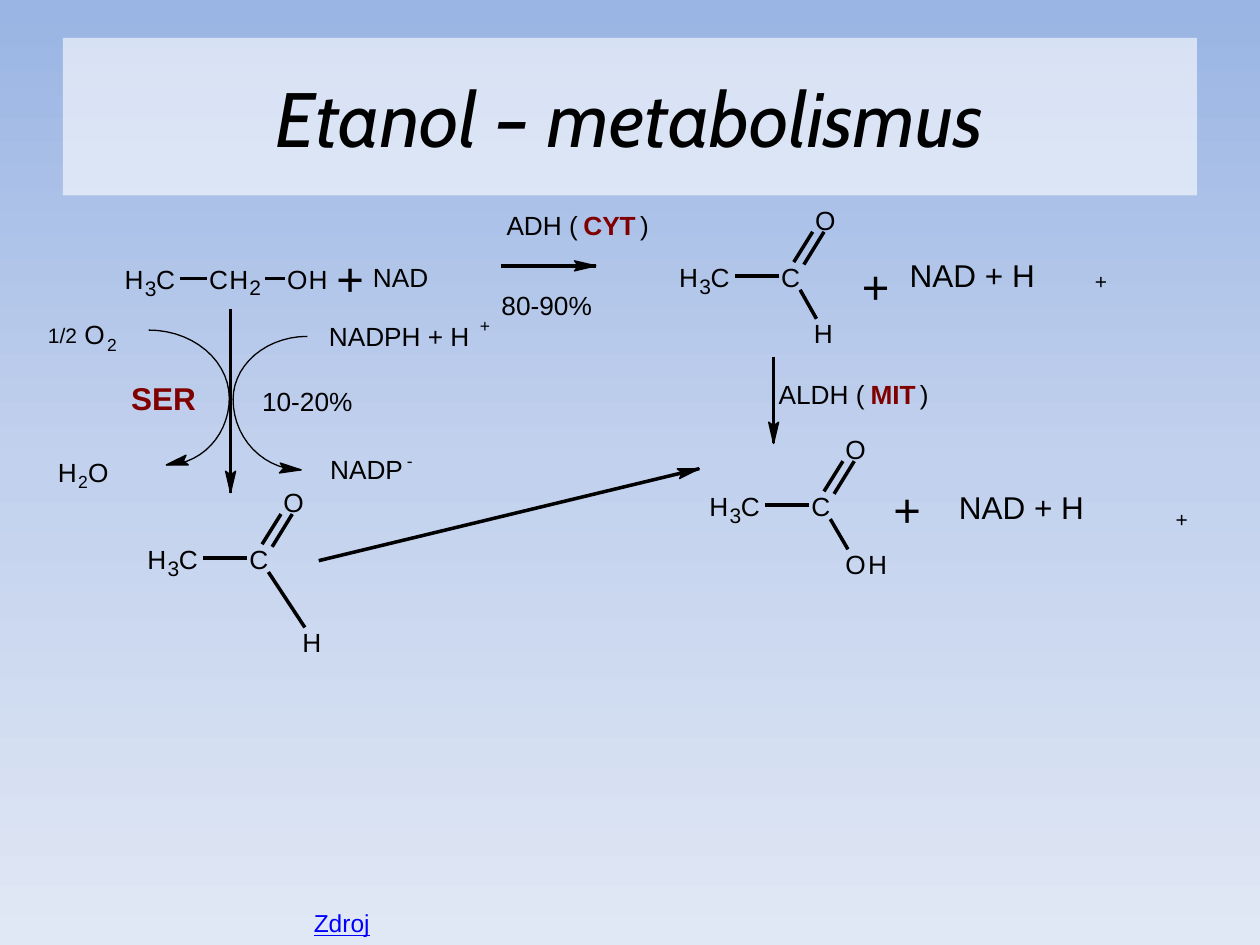
from copy import deepcopy
from dataclasses import dataclass
from math import atan2, cos, pi, radians, sin

from lxml.etree import SubElement
from pptx import Presentation
from pptx.dml.color import RGBColor
from pptx.enum.shapes import MSO_CONNECTOR, MSO_SHAPE
from pptx.enum.text import MSO_ANCHOR, PP_ALIGN
from pptx.oxml.ns import qn
from pptx.util import Inches, Pt


@dataclass(frozen=True)
class Theme:
    """Colours, fonts and type sizes of the slide."""
    ink: str = "000000"
    accent: str = "800000"
    link: str = "0000FF"
    panel: str = "FFFFFF"
    background: tuple = ("9AB5E4", "C2D1ED", "E1E8F5")
    title_font: str = "Cabin"
    font: str = "Arial"
    title: int = 44
    plus: int = 27
    large: int = 18
    formula: int = 15
    source: int = 14
    subscript: int = 12
    small: int = 10


THEME = Theme()


def style_run(run, size, color=THEME.ink, font=THEME.font):
    """Set the typeface, size and colour of a run."""
    run.font.name = font
    run.font.size = Pt(size)
    run.font.color.rgb = RGBColor.from_string(color)


def text_width(text, size):
    """Estimate the width in inches of a label, with some slack."""
    ems = sum(0.33 if letter in " ()-" else 0.58 if letter in "0123456789+" else 0.73
              for letter in text)
    return round((ems + 0.54) * size / 72, 2)


@dataclass
class Region:
    """Part of the reaction scheme, drawn relative to its top left corner."""
    slide: object
    left: float
    top: float

    def place(self, x, y):
        """Turn an offset in this region into slide lengths."""
        return Inches(self.left + x), Inches(self.top + y)

    def label(self, x, y, text, size=THEME.formula, color=THEME.ink, bold=False):
        """Add a one-line label and return its run."""
        box = self.slide.shapes.add_textbox(
            *self.place(x, y), Inches(text_width(text, size)), Inches(size / 50))
        frame = box.text_frame
        frame.word_wrap = True
        frame.margin_left = frame.margin_right = frame.margin_top = frame.margin_bottom = 0
        run = frame.paragraphs[0].add_run()
        run.text = text
        style_run(run, size, color)
        run.font.bold = bold
        return run

    def line(self, start, end):
        """Add a hairline between two points."""
        connector = self.slide.shapes.add_connector(
            MSO_CONNECTOR.STRAIGHT, *self.place(*start), *self.place(*end))
        connector.line.color.rgb = RGBColor.from_string(THEME.ink)
        connector.line.width = Pt(0)
        SubElement(connector.element.spPr, qn("a:effectLst"))

    def outline(self, points, closed):
        """Add a solid closed shape or an open hairline curve."""
        start, *others = [self.place(*point) for point in points]
        builder = self.slide.shapes.build_freeform(*start)
        builder.add_line_segments(others, close=closed)
        shape = builder.convert_to_shape()
        shape.shadow.inherit = False
        shape.line.color.rgb = RGBColor.from_string(THEME.ink)
        shape.line.width = Pt(0)
        if closed:
            shape.fill.solid()
            shape.fill.fore_color.rgb = RGBColor.from_string(THEME.ink)
        else:
            shape.fill.background()

    def arrowhead(self, tip, angle):
        """Add a notched arrowhead pointing along an angle in radians."""
        corners = [(-0.17, -0.04), (0, 0), (-0.17, 0.04), (-0.14, 0)]
        self.outline([(tip[0] + x * cos(angle) - y * sin(angle),
                       tip[1] + x * sin(angle) + y * cos(angle)) for x, y in corners], True)

    def arrow(self, start, end):
        """Add a straight reaction arrow."""
        self.line(start, end)
        self.arrowhead(end, atan2(end[1] - start[1], end[0] - start[0]))

    def curved_arrow(self, start, turn, end, degrees):
        """Add an arrow of two quarter ellipses that meet at the turn."""
        steps = [pi / 2 * step / 14 for step in range(15)]
        upper = [(start[0] + (turn[0] - start[0]) * sin(t),
                  turn[1] + (start[1] - turn[1]) * cos(t)) for t in steps]
        lower = [(end[0] + (turn[0] - end[0]) * cos(t),
                  turn[1] + (end[1] - turn[1]) * sin(t)) for t in steps[1:]]
        self.outline(upper + lower, False)
        self.arrowhead(end, radians(degrees))

    def methyl(self):
        """Add the H3C group at the corner of the region."""
        self.label(0.25, 0, "C")
        self.label(0, 0, "H")
        self.label(0.16, 0.1, "3", THEME.subscript)


def add_background(slide):
    """Fill the slide with the vertical gradient."""
    fill = slide.background.fill
    fill.gradient()
    fill.gradient_angle = 270
    first = next(slide.element.iter(qn("a:gs")))
    first.addnext(deepcopy(first))
    for index, (stop, color) in enumerate(zip(fill.gradient_stops, THEME.background)):
        stop.position = index / 2
        stop.color.rgb = RGBColor.from_string(color)


def add_title(slide, left, top, width, height):
    """Add the translucent title panel."""
    panel = slide.shapes.add_shape(MSO_SHAPE.RECTANGLE, Inches(left), Inches(top),
                                   Inches(width), Inches(height))
    panel.shadow.inherit = False
    panel.line.fill.background()
    panel.fill.solid()
    panel.fill.fore_color.rgb = RGBColor.from_string(THEME.panel)
    color = panel.element.spPr.find(qn("a:solidFill"))[0]
    SubElement(color, qn("a:alpha"), val="60000")
    panel.text_frame.vertical_anchor = MSO_ANCHOR.MIDDLE
    panel.text_frame.word_wrap = True
    paragraph = panel.text_frame.paragraphs[0]
    paragraph.alignment = PP_ALIGN.CENTER
    run = paragraph.add_run()
    run.text = "Etanol – metabolismus"
    style_run(run, THEME.title, font=THEME.title_font)
    run.font.italic = True


def add_ethanol(slide, left, top):
    """Add ethanol and its cofactor."""
    region = Region(slide, left, top)
    region.methyl()
    for x, letter in ((0.67, "C"), (0.83, "H"), (1.29, "O"), (1.46, "H")):
        region.label(x, 0, letter)
    region.label(0.99, 0.09, "2", THEME.subscript)
    region.line((0.65, 0.12), (0.44, 0.12))
    region.line((1.27, 0.12), (1.11, 0.12))
    region.label(1.68, -0.11, "+", THEME.plus)
    region.label(1.97, -0.02, "NAD")


def add_carbonyl(slide, left, top, group, group_x, group_y):
    """Add a methyl carbonyl compound with its lower group."""
    region = Region(slide, left, top)
    region.methyl()
    region.label(0.81, 0, "C")
    region.label(1.08, -0.45, "O")
    for index, letter in enumerate(group):
        region.label(group_x + 0.18 * index, group_y, letter)
    region.line((0.44, 0.12), (0.79, 0.12))
    region.line((1.06, -0.23), (0.91, 0.01))
    region.line((1.15, -0.23), (0.99, 0.03))
    region.line((group_x + 0.02, group_y + 0.01), (0.96, 0.23))


def add_cofactor(slide, left, top, text_x, text_y, charge_x, charge_y):
    """Add a plus sign and the reduced cofactor with its charge."""
    region = Region(slide, left, top)
    region.label(0, 0, "+", THEME.plus)
    region.label(text_x, text_y, "NAD + H", THEME.large)
    region.label(charge_x, charge_y, "+", THEME.subscript)


def add_enzyme(slide, left, top, name, place, place_x, close_x):
    """Add an enzyme name with its cell compartment in brackets."""
    region = Region(slide, left, top)
    region.label(0, 0, f"{name} (")
    region.label(place_x, 0, place, color=THEME.accent, bold=True)
    region.label(close_x, 0, ")")


def add_microsomal_step(slide, left, top):
    """Add the SER oxidation with its curved cofactor arrows."""
    region = Region(slide, left, top)
    region.arrow((1.45, 0), (1.45, 1.46))
    region.curved_arrow((0.8, 0.17), (1.44, 0.71), (0.94, 1.24), 167)
    region.curved_arrow((2.06, 0.22), (1.47, 0.72), (2.01, 1.28), 5)
    region.label(0, 0.11, "1/2", THEME.subscript)
    region.label(0.29, 0.08, "O")
    region.label(0.47, 0.2, "2", THEME.small)
    region.label(0.08, 1.17, "H")
    region.label(0.24, 1.29, "2", THEME.small)
    region.label(0.32, 1.17, "O")
    region.label(2.23, 0.09, "NADPH + H")
    region.label(3.43, 0.05, "+", THEME.small)
    region.label(2.24, 1.15, "NADP")
    region.label(2.85, 1.12, "-", THEME.small)
    region.label(1.7, 0.61, "10-20%")
    region.label(0.66, 0.56, "SER", THEME.large, THEME.accent, True)


def add_main_arrows(slide, left, top):
    """Add the arrows that lead to acetaldehyde and acetic acid."""
    region = Region(slide, left, top)
    region.arrow((1.45, 0), (2.2, 0))
    region.label(1.45, 0.19, "80-90%")
    region.arrow((3.61, 0.72), (3.61, 1.41))
    region.arrow((0, 2.34), (3.02, 1.61))


def add_source(slide, left, top):
    """Add the underlined source label."""
    run = Region(slide, left, top).label(0, 0, "Zdroj", THEME.source, THEME.link)
    run.font.underline = True


def main():
    """Build and save the slide."""
    presentation = Presentation()
    presentation.slide_width, presentation.slide_height = Inches(10), Inches(7.5)
    slide = presentation.slides.add_slide(presentation.slide_layouts[6])
    add_background(slide)
    add_title(slide, 0.5, 0.3, 9, 1.25)
    add_ethanol(slide, 0.99, 2.09)
    add_carbonyl(slide, 5.39, 2.07, "H", 1.07, 0.45)
    add_cofactor(slide, 6.84, 2.04, 0.38, -0.01, 1.85, 0.09)
    add_enzyme(slide, 4.02, 1.66, "ADH", "CYT", 0.61, 1.06)
    add_carbonyl(slide, 5.63, 3.89, "OH", 1.08, 0.46)
    add_cofactor(slide, 7.09, 3.81, 0.52, 0.06, 2.24, 0.21)
    add_enzyme(slide, 6.18, 3, "ALDH", "MIT", 0.73, 1.12)
    add_carbonyl(slide, 1.17, 4.31, "H", 1.23, 0.66)
    add_microsomal_step(slide, 0.38, 2.45)
    add_main_arrows(slide, 2.53, 2.11)
    add_source(slide, 2.49, 7.21)
    presentation.save("out.pptx")


if __name__ == "__main__":
    main()
